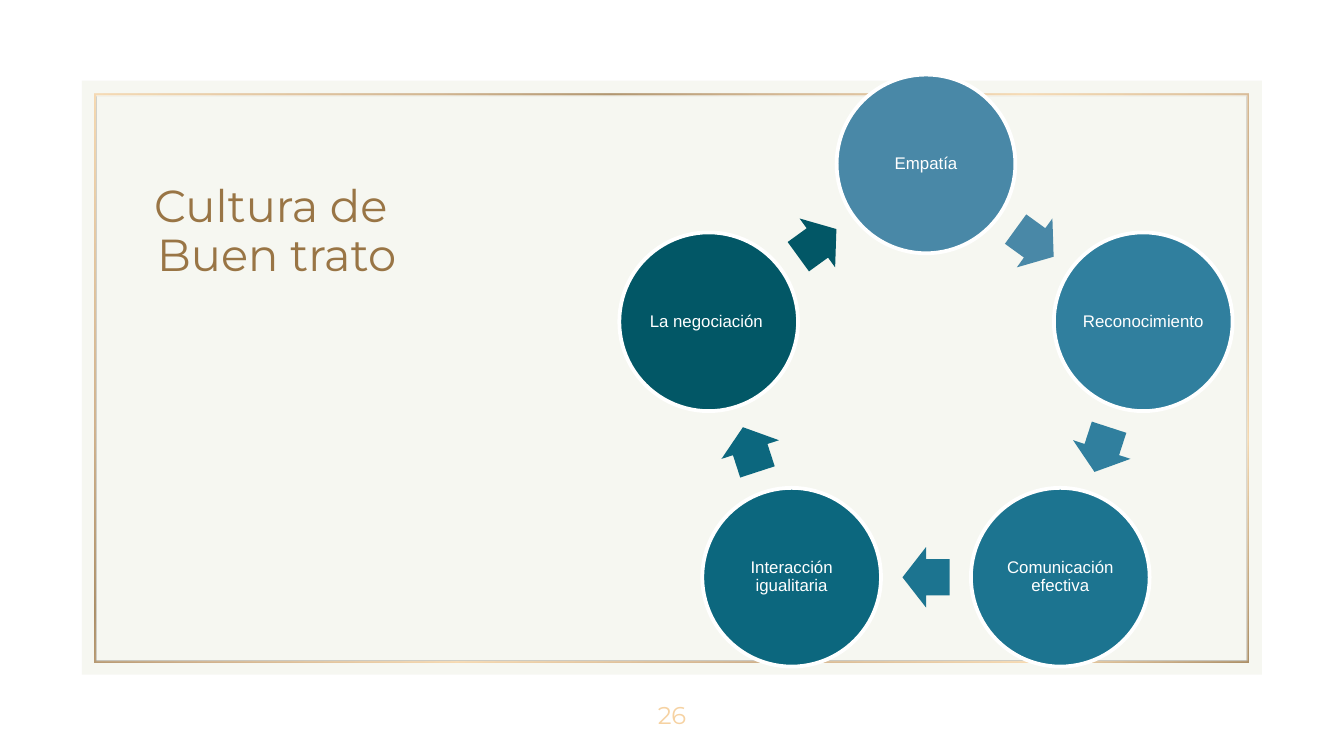
import math
from pptx import Presentation
from pptx.dml.color import RGBColor
from pptx.enum.shapes import MSO_SHAPE
from pptx.enum.text import MSO_ANCHOR, PP_ALIGN
from pptx.oxml import parse_xml
from pptx.oxml.ns import nsdecls
from pptx.util import Inches, Pt

RECT, FRAME = MSO_SHAPE.RECTANGLE, MSO_SHAPE.FRAME
OVAL, ARROW = MSO_SHAPE.OVAL, MSO_SHAPE.RIGHT_ARROW
MIDDLE, CENTER = MSO_ANCHOR.MIDDLE, PP_ALIGN.CENTER
GOLD, TAN, BROWN, WHITE = "F6D2A2", "C59F72", "997545", "FFFFFF"


def add_filled(kind, x, y, w, h, color):
    sp = s.shapes.add_shape(kind, Inches(x), Inches(y), Inches(w), Inches(h))
    sp.shadow.inherit = False
    sp.fill.solid()
    sp.fill.fore_color.rgb = RGBColor.from_string(color)
    sp.line.fill.background()
    return sp


def set_text(sp, text, font, size, color, inset=0, spacing=1.0):
    tf = sp.text_frame
    tf.word_wrap = True
    tf.vertical_anchor = MIDDLE
    tf.margin_left = tf.margin_right = Inches(inset)
    tf.margin_top = tf.margin_bottom = Inches(inset)
    p = tf.paragraphs[0]
    p.text = text
    p.alignment = CENTER
    p.line_spacing = spacing
    p.font.name = font
    p.font.size = Pt(size)
    p.font.color.rgb = RGBColor.from_string(color)


prs = Presentation()
prs.slide_width, prs.slide_height = Inches(10), Inches(10 * 9 / 16)
s = prs.slides.add_slide(prs.slide_layouts[6])

panel = add_filled(RECT, 0.61, 0.6, 8.78, 4.42, "F5F6F0")
panel_color = panel._element.spPr.xpath("./a:solidFill/a:srgbClr")[0]
panel_color.append(parse_xml(f'<a:alpha {nsdecls("a")} val="87000"/>'))

frame = add_filled(FRAME, 0.7, 0.7, 8.59, 4.23, GOLD)
frame.adjustments[0] = 0.004
stops = [(0, GOLD), (20, TAN), (30, BROWN), (39, TAN),
         (54, GOLD), (71, TAN), (87, GOLD), (100, BROWN)]
stop_xml = "".join(
    f'<a:gs pos="{pos * 1000}"><a:srgbClr val="{color}">'
    f'<a:alpha val="80000"/></a:srgbClr></a:gs>'
    for pos, color in stops)
gradient = parse_xml(
    f'<a:gradFill {nsdecls("a")} rotWithShape="1"><a:gsLst>{stop_xml}</a:gsLst>'
    f'<a:lin ang="2700000" scaled="0"/></a:gradFill>')
solid = frame._element.spPr.xpath("./a:solidFill")[0]
solid.getparent().replace(solid, gradient)

title = s.shapes.add_textbox(Inches(0.78), Inches(1.46), Inches(2.47), Inches(0.54))
set_text(title, "Cultura de\v Buen trato", "Montserrat", 24, BROWN, spacing=0.9)

number = s.shapes.add_textbox(Inches(4.7), Inches(5.02), Inches(0.6), Inches(0.6))
set_text(number, "26", "Montserrat", 13, GOLD)

steps = [("Empatía", "4988A7"),
         ("Reconocimiento", "307F9E"),
         ("Comunicación efectiva", "1C7490"),
         ("Interacción igualitaria", "0C677E"),
         ("La negociación ", "025766")]
cx, cy, radius, size = 6.89, 2.92, 1.7, 1.33
arrow_w, arrow_h = 0.35, 0.45
step = 360 / len(steps)
arrow_radius = radius * math.cos(math.radians(step / 2))

for i, (label, color) in enumerate(steps):
    angle = math.radians(i * step)
    x = cx + radius * math.sin(angle)
    y = cy - radius * math.cos(angle)
    circle = add_filled(OVAL, x - size / 2, y - size / 2, size, size, color)
    circle.line.color.rgb = RGBColor.from_string(WHITE)
    circle.line.width = Pt(2)
    set_text(circle, label, "Arial", 9, WHITE, 0.01, 0.9)

    angle = math.radians((i + 0.5) * step)
    x = cx + arrow_radius * math.sin(angle)
    y = cy - arrow_radius * math.cos(angle)
    arrow = add_filled(ARROW, x - arrow_w / 2, y - arrow_h / 2, arrow_w, arrow_h, color)
    arrow.adjustments[0] = 0.6
    arrow.adjustments[1] = 0.5
    arrow.rotation = (i + 0.5) * step

prs.save("out.pptx")
